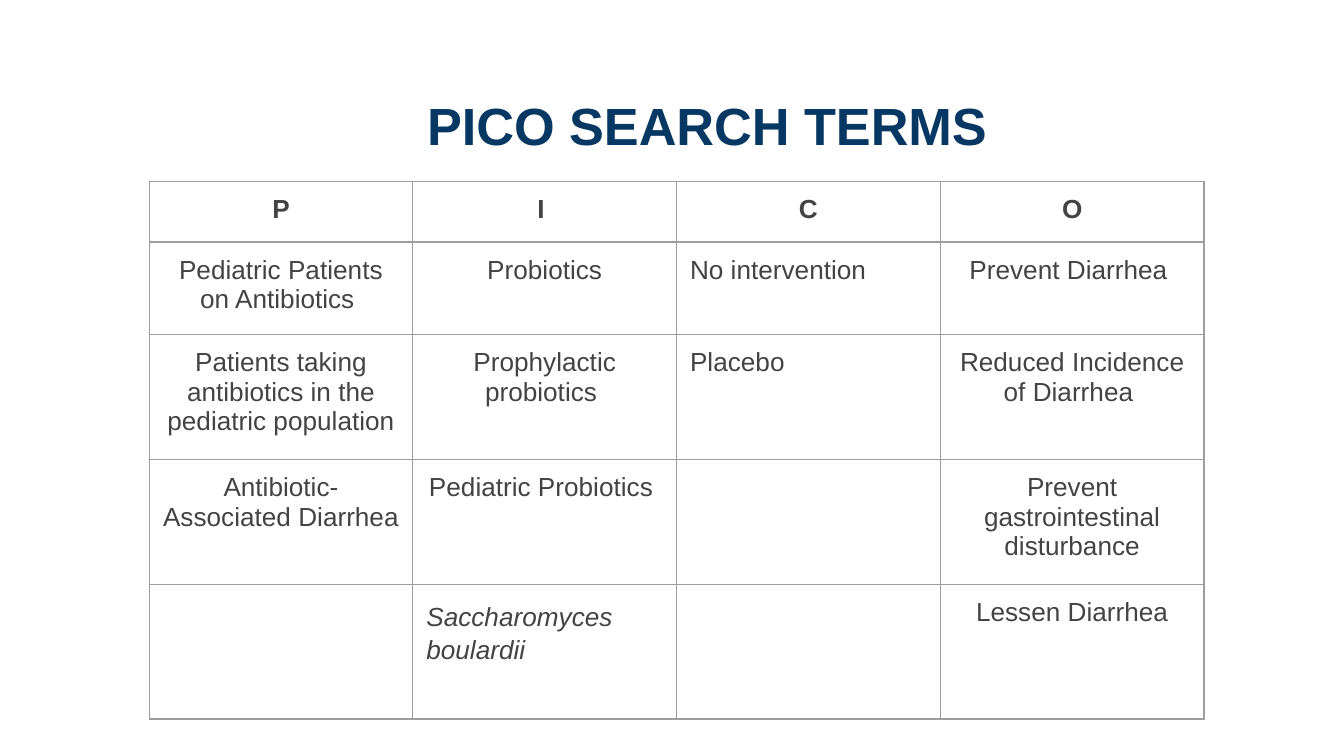
from lxml import etree
from pptx import Presentation
from pptx.dml.color import RGBColor
from pptx.enum.text import MSO_ANCHOR, PP_ALIGN
from pptx.oxml.ns import qn
from pptx.util import Inches, Pt

CENTER, LEFT = PP_ALIGN.CENTER, PP_ALIGN.LEFT
MIDDLE = MSO_ANCHOR.MIDDLE
WHITE = RGBColor(0xFF, 0xFF, 0xFF)
NAVY = RGBColor(0x07, 0x37, 0x63)
DARK_GRAY = RGBColor(0x43, 0x43, 0x43)
BORDER_GRAY = RGBColor(0x9E, 0x9E, 0x9E)
FONT = "Arial"
MARGIN = Inches(0.1)
TABLE_WIDTH = 7.85
ROW_HEIGHTS = [0.45, 0.69, 0.93, 0.93, 1]
TERMS = [
    ["P", "I ", "C", "O"],
    ["Pediatric Patients on Antibiotics ", "Probiotics", "No intervention", "Prevent Diarrhea "],
    ["Patients taking antibiotics in the pediatric population", "Prophylactic probiotics ",
     "Placebo", "Reduced Incidence of Diarrhea "],
    ["Antibiotic-\nAssociated Diarrhea", "Pediatric Probiotics ", "",
     "Prevent gastrointestinal disturbance"],
    ["", "Saccharomyces boulardii", "", "Lessen Diarrhea"],
]
LEFT_ALIGNED = {"No intervention", "Placebo", "Saccharomyces boulardii"}


def style_font(font, size, color, bold):
    font.name = FONT
    font.size = Pt(size)
    font.bold = bold
    font.color.rgb = color


def add_borders(cell):
    properties = cell._tc.get_or_add_tcPr()
    for position, side in enumerate(("lnL", "lnR", "lnT", "lnB")):
        line = etree.Element(qn(f"a:{side}"), w=str(Pt(0.75)))
        fill = etree.SubElement(line, qn("a:solidFill"))
        etree.SubElement(fill, qn("a:srgbClr"), val=str(BORDER_GRAY))
        properties.insert(position, line)


deck = Presentation()
deck.slide_width = Inches(10)
deck.slide_height = Inches(10 * 9 / 16)
page = deck.slides.add_slide(deck.slide_layouts[5])

title = page.shapes.title
title.left, title.top = Inches(1.97), Inches(0.59)
title.width, title.height = Inches(6.58), Inches(0.67)
title.fill.solid()
title.fill.fore_color.rgb = WHITE
frame = title.text_frame
frame.text = "PICO SEARCH TERMS"
frame.vertical_anchor = MIDDLE
frame.margin_left = frame.margin_right = frame.margin_top = frame.margin_bottom = MARGIN
frame.paragraphs[0].alignment = CENTER
style_font(frame.paragraphs[0].runs[0].font, 28, NAVY, True)

table = page.shapes.add_table(
    len(TERMS), len(TERMS[0]), Inches(1.11), Inches(1.35),
    Inches(TABLE_WIDTH), Inches(sum(ROW_HEIGHTS))).table
table.first_row = False
table.horz_banding = False

for row_index, (height, row_terms) in enumerate(zip(ROW_HEIGHTS, TERMS)):
    table.rows[row_index].height = Inches(height)
    for column_index, term in enumerate(row_terms):
        cell = table.cell(row_index, column_index)
        cell.margin_left = cell.margin_right = cell.margin_top = cell.margin_bottom = MARGIN
        cell.fill.solid()
        cell.fill.fore_color.rgb = WHITE
        add_borders(cell)
        cell.text_frame.text = term
        for para in cell.text_frame.paragraphs:
            para.alignment = LEFT if term in LEFT_ALIGNED else CENTER
            for span in para.runs:
                style_font(span.font, 14, DARK_GRAY, row_index == 0)

species = table.cell(4, 1).text_frame.paragraphs[0]
species.line_spacing = 1.15
species.space_after = Pt(16)
species.runs[0].font.italic = True

deck.save("out.pptx")
